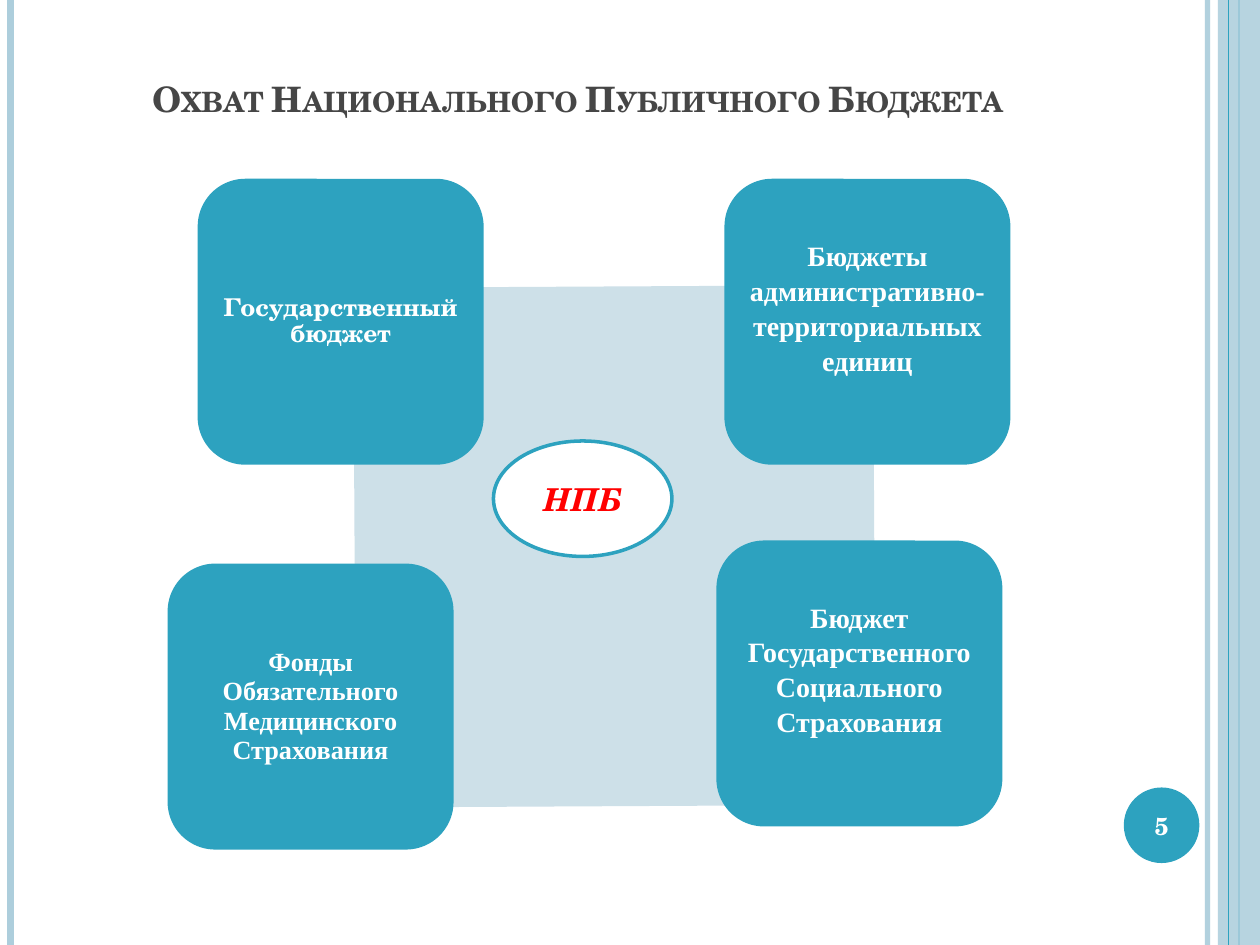
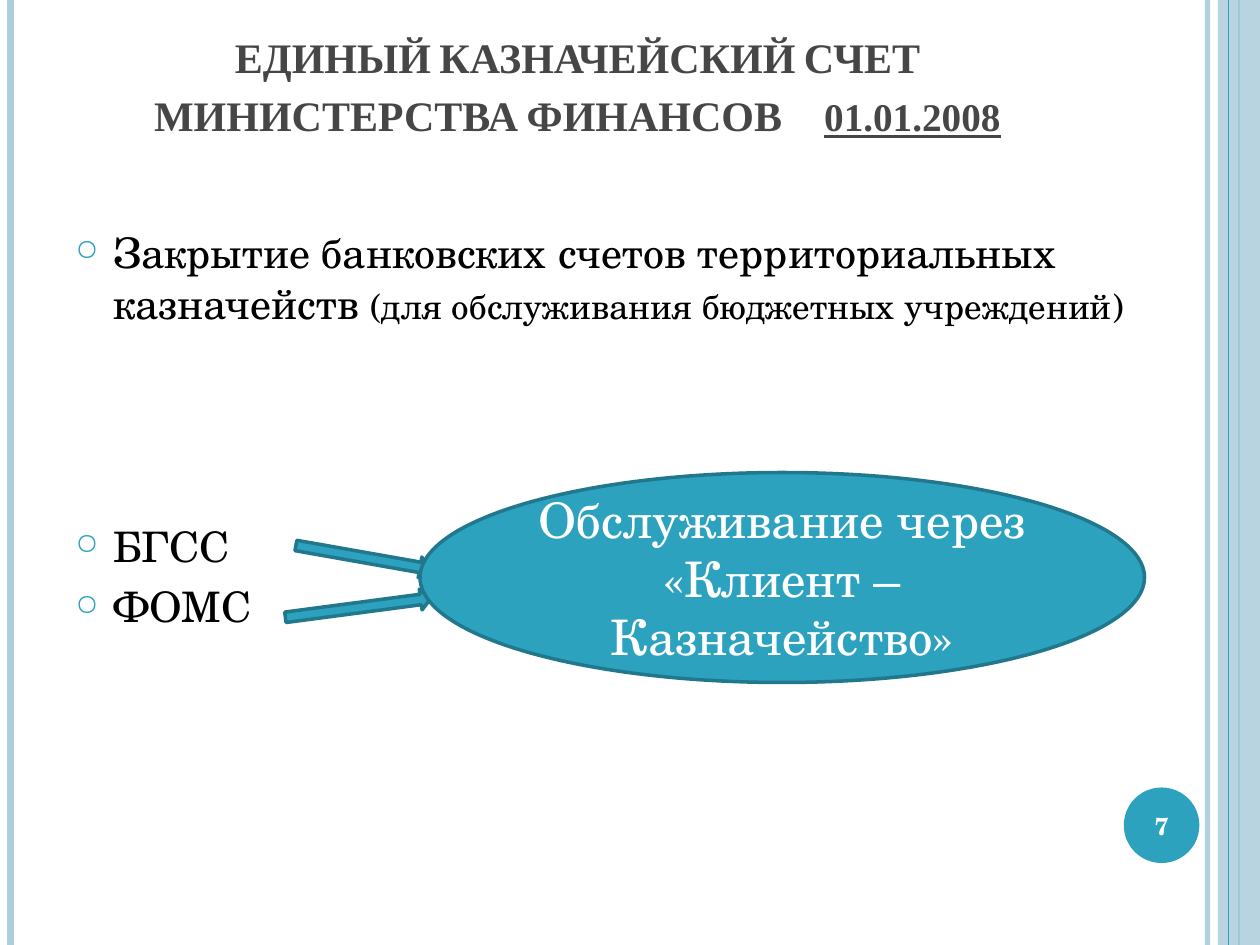
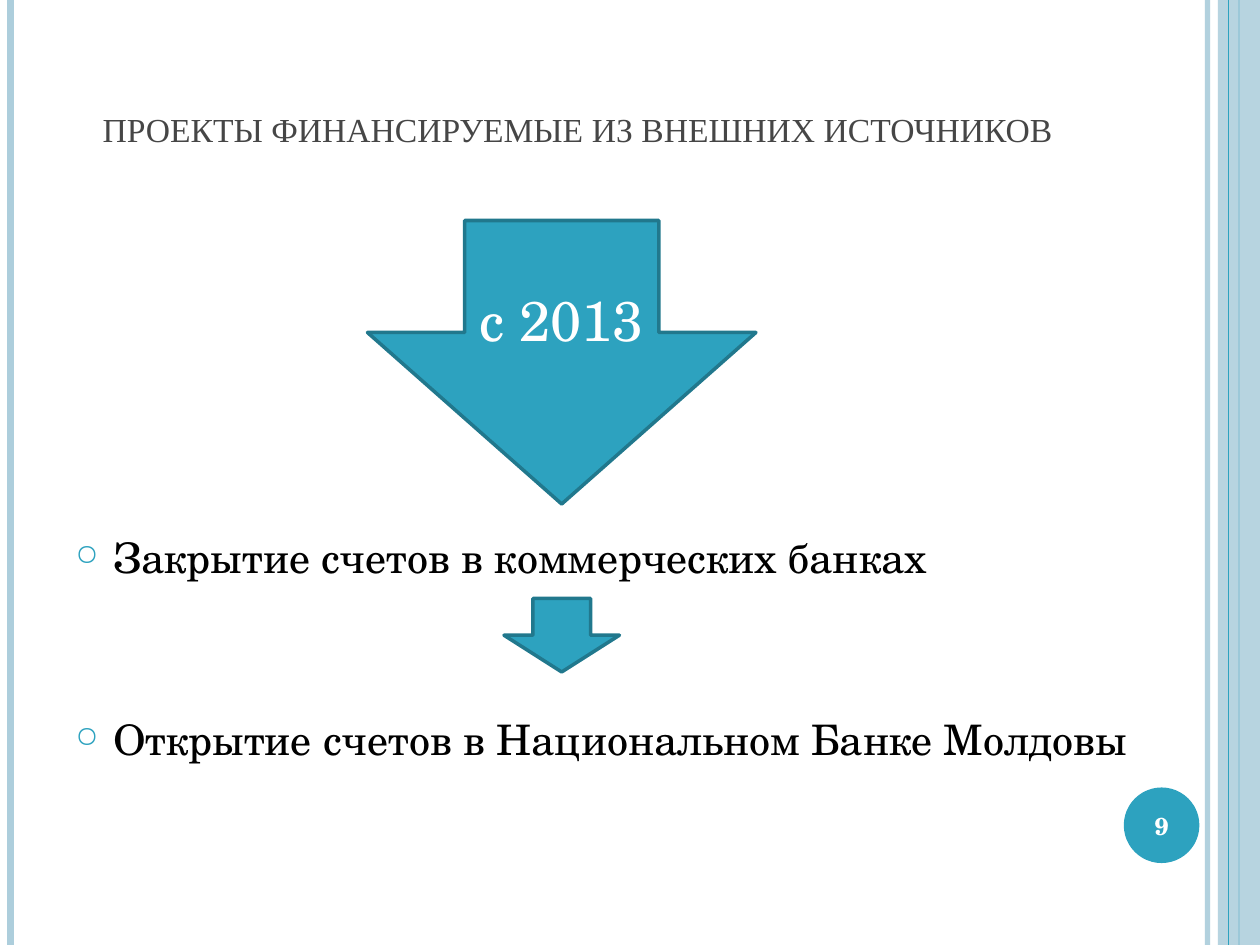
from dataclasses import dataclass
from lxml import etree
from pptx import Presentation
from pptx.dml.color import RGBColor
from pptx.enum.shapes import MSO_CONNECTOR, MSO_SHAPE
from pptx.enum.text import MSO_ANCHOR, PP_ALIGN
from pptx.oxml.ns import qn
from pptx.util import Pt

STRAIGHT = MSO_CONNECTOR.STRAIGHT
RECT, OVAL, DIAMOND = MSO_SHAPE.RECTANGLE, MSO_SHAPE.OVAL, MSO_SHAPE.DIAMOND
ROUNDED = MSO_SHAPE.ROUNDED_RECTANGLE
RIGHT_ARROW, DOWN_ARROW = MSO_SHAPE.RIGHT_ARROW, MSO_SHAPE.DOWN_ARROW
TOP, MIDDLE, BOTTOM = MSO_ANCHOR.TOP, MSO_ANCHOR.MIDDLE, MSO_ANCHOR.BOTTOM
LEFT, CENTER = PP_ALIGN.LEFT, PP_ALIGN.CENTER


@dataclass(frozen=True)
class Theme:
    width: float = 720
    height: float = 540
    schola: str = "TeX Gyre Schola"
    times: str = "Times New Roman"
    accent: str = "2DA2BF"
    edge: str = "21788D"
    band: str = "ADCEDC"
    pale: str = "CDE0E8"
    heading: str = "464646"
    ink: str = "000000"
    white: str = "FFFFFF"
    alert: str = "FF0000"
    number_size: float = 14
    body_size: float = 24
    note_size: float = 20
    outline: float = 2
    inset: float = 3.6


T = Theme()

RULES = [(690, T.band, 3, 93), (6, T.band, 4.5, 100), (708, T.accent, 1.5, 100)]
INNER_RULE = (702, T.accent, 0.75, 100)

COVERAGE = {
    "number": "5",
    "title": [("Охват Национального Публичного Бюджета",
               dict(size=20, face=T.schola, bold=True))],
    "title_height": 50.4,
}
BUDGET_SIDE = 163.4
BUDGETS = [
    ("Государственный бюджет", 113, 102.2, T.schola, 14, 0.9, 0),
    ("Бюджеты административно-территориальных единиц", 414, 102.2, T.times, 16, 1.04, 17),
    ("Фонды Обязательного Медицинского Страхования", 95.8, 322.1, T.times, 15, 0.94, 0),
    ("Бюджет Государственного Социального Страхования", 409.4, 308.9, T.times, 16, 1.04, 17),
]
HUB = "НПБ"

ACCOUNT = {
    "number": "7",
    "title": [
        ("ЕДИНЫЙ КАЗНАЧЕЙСКИЙ СЧЕТ МИНИСТЕРСТВА ФИНАНСОВ",
         dict(size=24, face=T.times, bold=True)),
        (" ", dict(size=24, face=T.times, bold=True, tracking=9.6)),
        ("01.01.2008", dict(size=28, face=T.times, bold=True, underline=True)),
    ],
    "title_height": 62.6,
}
ACCOUNT_POINTS = [
    (0, [("Закрытие банковских счетов территориальных казначейств ", {}),
         ("(для обслуживания бюджетных учреждений)", dict(size=T.note_size))]),
    (110, [("БГСС", {})]),
    (6, [("ФОМС", {})]),
]
SERVICE = ["Обслуживание через", "«Клиент – Казначейство»"]
SERVICE_ARROWS = [((168.5, 312.5, 78, 12), 10), ((162.7, 341.3, 84, 12), 352.5)]

PROJECTS = {
    "number": "9",
    "title": [("проекты финансируемые из внешних источников",
               dict(size=24, face=T.times))],
    "title_height": 68.4,
}
PROJECT_POINTS = [
    (0, [("Закрытие счетов в коммерческих банках", {})]),
    (75.6, [("Открытие счетов в Национальном Банке Молдовы", {})]),
]
SINCE = "с 2013"


def set_alpha(fill_parent, percent):
    color = next(fill_parent.iter(qn("a:srgbClr")))
    etree.SubElement(color, qn("a:alpha")).set("val", str(percent * 1000))


def add_rule(slide, x, color, weight, alpha):
    rule = slide.shapes.add_connector(STRAIGHT, Pt(x), 0, Pt(x), Pt(T.height))
    rule.line.color.rgb = RGBColor.from_string(color)
    rule.line.width = Pt(weight)
    properties = rule._element.spPr
    etree.SubElement(properties, qn("a:effectLst"))
    if alpha < 100:
        set_alpha(properties, alpha)


def add_figure(slide, kind, box, fill=T.accent, edge=None, rotation=0):
    figure = slide.shapes.add_shape(kind, *map(Pt, box))
    figure.shadow.inherit = False
    figure.fill.solid()
    figure.fill.fore_color.rgb = RGBColor.from_string(fill)
    if edge:
        figure.line.color.rgb = RGBColor.from_string(edge)
        figure.line.width = Pt(T.outline)
    else:
        figure.line.fill.background()
    figure.rotation = rotation
    return figure


def add_run(paragraph, text, size, face=T.schola, color=T.white, bold=False,
            italic=False, underline=False, small_caps=False, tracking=0):
    run = paragraph.add_run()
    run.text = text
    font = run.font
    font.size, font.name = Pt(size), face
    font.bold, font.italic, font.underline = bold, italic, underline
    font.color.rgb = RGBColor.from_string(color)
    if small_caps:
        run._r.rPr.set("cap", "small")
    if tracking:
        run._r.rPr.set("spc", str(round(tracking * 100)))


def prepare_frame(frame, anchor, side=T.inset, extra_bottom=0):
    frame.word_wrap = True
    frame.vertical_anchor = anchor
    frame.margin_left = frame.margin_right = Pt(side)
    frame.margin_top = Pt(T.inset)
    frame.margin_bottom = Pt(T.inset + extra_bottom)


def label(figure, lines, size, spacing=1, extra_bottom=0, **style):
    frame = figure.text_frame
    prepare_frame(frame, MIDDLE, extra_bottom=extra_bottom)
    for index, line in enumerate(lines):
        paragraph = frame.add_paragraph() if index else frame.paragraphs[0]
        paragraph.alignment = CENTER
        paragraph.line_spacing = spacing
        add_run(paragraph, line, size, **style)


def add_bullet(paragraph):
    properties = paragraph._p.get_or_add_pPr()
    properties.set("marL", str(Pt(21.6)))
    properties.set("indent", str(-Pt(21.6)))
    color = etree.SubElement(properties, qn("a:buClr"))
    etree.SubElement(color, qn("a:srgbClr")).set("val", T.accent)
    etree.SubElement(properties, qn("a:buSzPct")).set("val", "70000")
    etree.SubElement(properties, qn("a:buChar")).set("char", "○")


def add_points(slide, points, box):
    frame = slide.shapes.add_textbox(*map(Pt, box)).text_frame
    prepare_frame(frame, TOP, side=7.2)
    for index, (gap, pieces) in enumerate(points):
        paragraph = frame.add_paragraph() if index else frame.paragraphs[0]
        add_bullet(paragraph)
        paragraph.alignment = LEFT
        if gap:
            paragraph.space_before = Pt(gap)
        for text, style in pieces:
            add_run(paragraph, text, **{"size": T.body_size, "color": T.ink, **style})


def start_slide(deck, content):
    slide = deck.slides.add_slide(deck.slide_layouts[6])
    for rule in RULES:
        add_rule(slide, *rule)
    band = add_figure(slide, RECT, (696, 0, 24, T.height), T.band)
    set_alpha(band._element.spPr, 87)
    add_rule(slide, *INNER_RULE)
    badge = add_figure(slide, OVAL, (642.2, 450, 43.2, 43.2))
    label(badge, [content["number"]], T.number_size, bold=True)

    title = slide.shapes.add_textbox(
        Pt(36), Pt(21.6), Pt(588), Pt(content["title_height"])).text_frame
    prepare_frame(title, BOTTOM, side=7.2)
    heading = title.paragraphs[0]
    heading.alignment = CENTER
    for text, style in content["title"]:
        add_run(heading, text, color=T.heading, small_caps=True, **style)
    return slide


def build_coverage(deck):
    slide = start_slide(deck, COVERAGE)
    add_figure(slide, DIAMOND, (141.1, 102.2, 420, 420), T.pale, rotation=44.7)
    for name, left, top, face, size, spacing, extra_bottom in BUDGETS:
        budget = add_figure(slide, ROUNDED, (left, top, BUDGET_SIDE, BUDGET_SIDE))
        label(budget, [name], size, spacing, extra_bottom, face=face, bold=True)
    hub = add_figure(slide, OVAL, (282, 252, 102, 66), T.white, T.accent)
    label(hub, [HUB], 18, color=T.alert, bold=True, italic=True)


def build_account(deck):
    slide = start_slide(deck, ACCOUNT)
    add_points(slide, ACCOUNT_POINTS, (36, 126, 642, 384))
    for box, rotation in SERVICE_ARROWS:
        add_figure(slide, RIGHT_ARROW, box, edge=T.edge, rotation=rotation)
    service = add_figure(slide, OVAL, (240, 270, 414, 120), edge=T.edge)
    label(service, SERVICE, 28)


def build_projects(deck):
    slide = start_slide(deck, PROJECTS)
    add_points(slide, PROJECT_POINTS, (36, 300, 648, 210))
    since = add_figure(slide, DOWN_ARROW, (210, 126, 222, 162), edge=T.edge)
    since.adjustments[0], since.adjustments[1] = 0.5, 0.605
    label(since, [SINCE], 32)
    add_figure(slide, DOWN_ARROW, (288, 342, 66, 42), edge=T.edge)


def main():
    deck = Presentation()
    deck.slide_width, deck.slide_height = Pt(T.width), Pt(T.height)
    for build in (build_coverage, build_account, build_projects):
        build(deck)
    deck.save("out.pptx")


if __name__ == "__main__":
    main()
